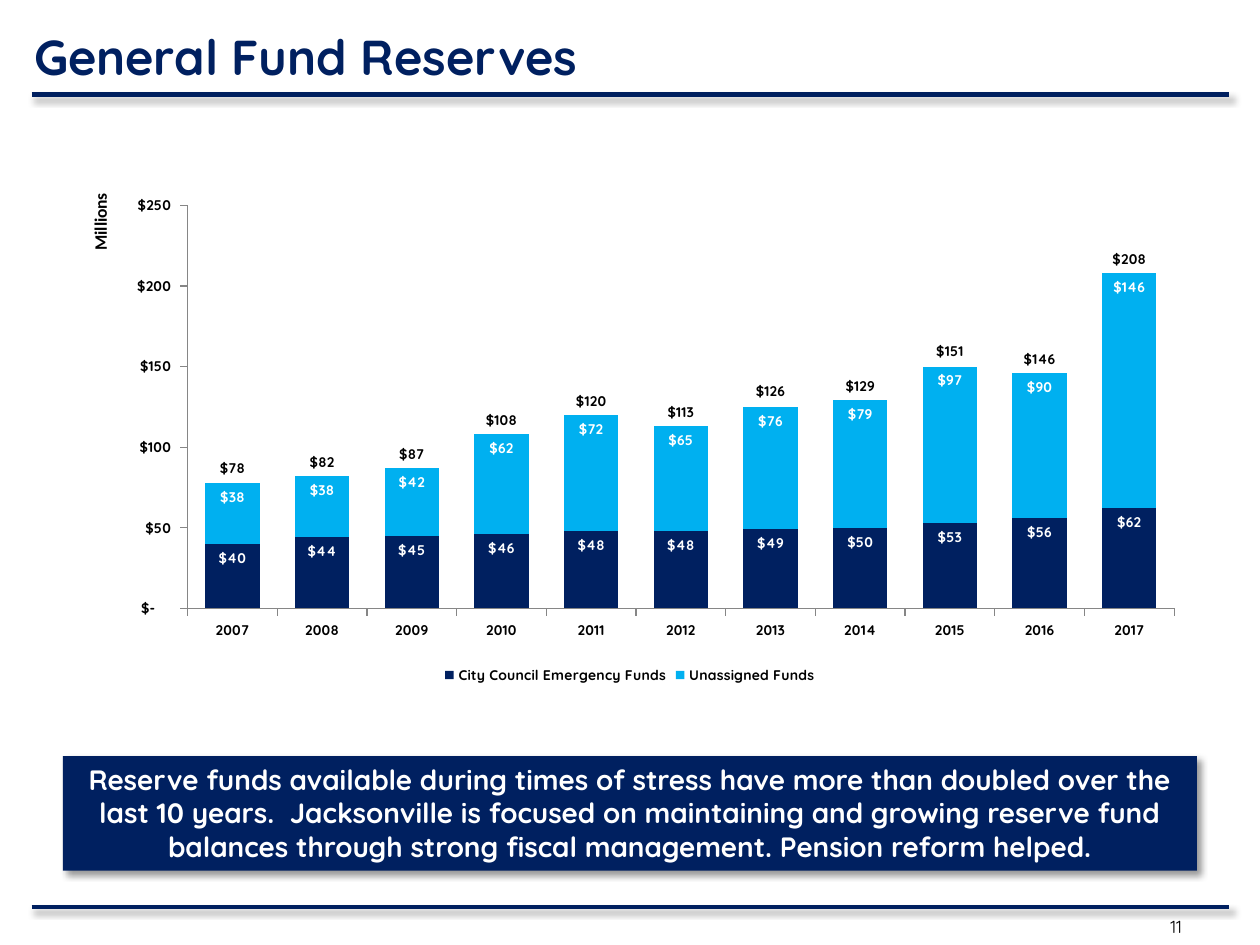
from dataclasses import dataclass

import lxml.etree
import pptx
import pptx.chart.data
import pptx.dml.color
import pptx.enum.chart
import pptx.enum.shapes
import pptx.enum.text
import pptx.oxml
import pptx.oxml.ns
import pptx.util

Inches = pptx.util.Inches
Pt = pptx.util.Pt
qn = pptx.oxml.ns.qn

COLORS = {
    "navy": "002060",
    "sky": "00B0F0",
    "white": "FFFFFF",
    "black": "000000",
    "axis": "868686",
}
DOLLARS = r'_("$"* #,##0_);_("$"* \(#,##0\);_("$"* "-"??_);_(@_)'
CHART_TEXT = {"size": Pt(8), "bold": True, "name": "Quicksand"}
LABEL_POSITION = pptx.enum.chart.XL_LABEL_POSITION
YEARS = [str(year) for year in range(2007, 2018)]


@dataclass
class FundSeries:
    name: str
    values: list[int]
    label_color: str
    label_position: LABEL_POSITION
    fill: str | None = None


@dataclass
class TextBlock:
    text: str
    font: dict
    color: str
    align: pptx.enum.text.PP_ALIGN
    frame: dict


FUNDS = [
    FundSeries("City Council Emergency Funds", [40, 44, 45, 46, 48, 48, 49, 50, 53, 56, 62],
               "white", LABEL_POSITION.INSIDE_END, "navy"),
    FundSeries("Unassigned Funds", [38, 38, 42, 62, 72, 65, 76, 79, 97, 90, 146],
               "white", LABEL_POSITION.INSIDE_END, "sky"),
    FundSeries("Series 3", [78, 82, 87, 108, 120, 113, 126, 129, 151, 146, 208],
               "black", LABEL_POSITION.ABOVE),
]


def rgb(name: str) -> pptx.dml.color.RGBColor:
    return pptx.dml.color.RGBColor.from_string(COLORS[name])


def set_format(target, values: dict) -> None:
    for attribute, value in values.items():
        setattr(target, attribute, value)


def style_font(font, values: dict, color: str) -> None:
    set_format(font, values)
    font.color.rgb = rgb(color)


def add_shadow(shape) -> None:
    """Add a soft shadow falling down and right; fill and line must be set already."""
    shape._element.spPr.append(pptx.oxml.parse_xml(
        f'<a:effectLst {pptx.oxml.ns.nsdecls("a")}>'
        f'<a:outerShdw blurRad="{Pt(4)}" dist="{Pt(3)}" dir="2700000" algn="tl" rotWithShape="0">'
        f'<a:srgbClr val="{COLORS["black"]}"><a:alpha val="40000"/></a:srgbClr>'
        '</a:outerShdw></a:effectLst>'))


def add_rule(slide, top: float) -> None:
    rule = slide.shapes.add_connector(
        pptx.enum.shapes.MSO_CONNECTOR.STRAIGHT,
        Inches(0.25), Inches(top), Inches(9.75), Inches(top))
    rule.line.color.rgb = rgb("navy")
    rule.line.width = Pt(2.5)
    add_shadow(rule)


def write_text(shape, block: TextBlock) -> None:
    set_format(shape.text_frame, block.frame)
    para = shape.text_frame.paragraphs[0]
    para.alignment = block.align
    span = para.add_run()
    span.text = block.text
    style_font(span.font, block.font, block.color)


def add_child(parent, tag: str, value=None):
    child = lxml.etree.SubElement(parent, qn(tag))
    if value is not None:
        child.set("val", str(value))
    return child


def manual_layout(places: dict, inner: bool = False):
    """Return a c:layout whose places are fractions of the chart."""
    layout = lxml.etree.Element(qn("c:layout"))
    manual = add_child(layout, "c:manualLayout")
    if inner:
        add_child(manual, "c:layoutTarget", "inner")
    for mode in ("c:xMode", "c:yMode"):
        add_child(manual, mode, "edge")
    for key, value in places.items():
        add_child(manual, f"c:{key}", value)
    return layout


def replace_layout(parent, layout, index: int) -> None:
    for old in parent.findall(qn("c:layout")):
        parent.remove(old)
    parent.insert(index, layout)


def move_totals_to_line(chart) -> None:
    """Turn the last stacked series into a line plot on the same axes."""
    bars = chart.plots[0]._element
    totals = bars.findall(qn("c:ser"))[-1]
    for invert in totals.findall(qn("c:invertIfNegative")):
        totals.remove(invert)
    line_plot = lxml.etree.Element(qn("c:lineChart"))
    add_child(line_plot, "c:grouping", "standard")
    add_child(line_plot, "c:varyColors", 0)
    line_plot.append(totals)
    add_child(line_plot, "c:marker", 1)
    for axis in bars.findall(qn("c:axId")):
        add_child(line_plot, "c:axId", axis.get("val"))
    bars.addnext(line_plot)


def style_series(series, fund: FundSeries) -> None:
    if fund.fill:
        series.format.fill.solid()
        series.format.fill.fore_color.rgb = rgb(fund.fill)
    else:
        series.format.line.fill.background()
        series.marker.style = pptx.enum.chart.XL_MARKER_STYLE.NONE
        series.smooth = False
    labels = series.data_labels
    set_format(labels, {"show_value": True, "number_format": DOLLARS,
                        "number_format_is_linked": False, "position": fund.label_position})
    style_font(labels.font, CHART_TEXT, fund.label_color)


def style_axes(chart) -> None:
    for axis in (chart.category_axis, chart.value_axis):
        set_format(axis, {"has_major_gridlines": False,
                          "major_tick_mark": pptx.enum.chart.XL_TICK_MARK.OUTSIDE})
        axis.format.line.color.rgb = rgb("axis")
        style_font(axis.tick_labels.font, CHART_TEXT, "black")
    values = chart.value_axis
    set_format(values, {"minimum_scale": 0, "maximum_scale": 250, "major_unit": 50})
    set_format(values.tick_labels, {"number_format": DOLLARS, "number_format_is_linked": False})
    title = values.axis_title
    title.text_frame.text = "Millions"
    style_font(title.text_frame.paragraphs[0].runs[0].font,
               {"size": Pt(10), "bold": True, "name": "Calibri"}, "black")
    replace_layout(title._element, manual_layout({"x": 0.02, "y": 0.01}), 1)


def style_legend(chart) -> None:
    chart.has_legend = True
    legend = chart.legend
    set_format(legend, {"position": pptx.enum.chart.XL_LEGEND_POSITION.BOTTOM,
                        "include_in_layout": False})
    style_font(legend.font, CHART_TEXT, "black")
    entry = lxml.etree.Element(qn("c:legendEntry"))
    add_child(entry, "c:idx", len(FUNDS) - 1)
    add_child(entry, "c:delete", 1)
    legend._element.find(qn("c:legendPos")).addnext(entry)


def add_reserve_chart(slide) -> None:
    data = pptx.chart.data.CategoryChartData()
    data.categories = YEARS
    for fund in FUNDS:
        data.add_series(fund.name, fund.values)
    chart = slide.shapes.add_chart(
        pptx.enum.chart.XL_CHART_TYPE.COLUMN_STACKED,
        Inches(0.5), Inches(1.47), Inches(9), Inches(4), data).chart
    chart.has_title = False
    style_font(chart.font, {"size": Pt(10), "name": "Calibri"}, "black")
    set_format(chart.plots[0], {"gap_width": 65, "overlap": 100, "vary_by_categories": False})
    move_totals_to_line(chart)
    all_series = [series for plot in chart.plots for series in plot.series]
    for series, fund in zip(all_series, FUNDS):
        style_series(series, fund)
    style_axes(chart)
    style_legend(chart)
    plot_area = chart.plots[0]._element.getparent()
    replace_layout(plot_area, manual_layout(
        {"x": 0.11, "y": 0.04, "w": 0.87, "h": 0.8}, inner=True), 0)


def main() -> None:
    deck = pptx.Presentation()
    deck.slide_width, deck.slide_height = Inches(10), Inches(7.5)
    slide = deck.slides.add_slide(deck.slide_layouts[6])
    align, anchor = pptx.enum.text.PP_ALIGN, pptx.enum.text.MSO_ANCHOR
    grow = pptx.enum.text.MSO_AUTO_SIZE.SHAPE_TO_FIT_TEXT
    margins = {"margin_left": Inches(0.12), "margin_right": Inches(0.12),
               "margin_top": Inches(0.06), "margin_bottom": Inches(0.06)}

    for top in (0.75, 7.2):
        add_rule(slide, top)

    number_box = slide.shapes.add_textbox(Inches(7.17), Inches(7.15), Inches(2.33), Inches(0.4))
    write_text(number_box, TextBlock(
        "11", {"size": Pt(10), "name": "Quicksand"}, "black", align.RIGHT,
        margins | {"word_wrap": True, "vertical_anchor": anchor.MIDDLE}))

    title_box = slide.shapes.add_textbox(Inches(0.15), Inches(0.15), Inches(4.59), Inches(0.59))
    write_text(title_box, TextBlock(
        "General Fund Reserves", {"size": Pt(28), "bold": True, "name": "Quicksand"}, "navy",
        align.LEFT, margins | {"word_wrap": False, "auto_size": grow}))

    message_box = slide.shapes.add_shape(
        pptx.enum.shapes.MSO_SHAPE.RECTANGLE, Inches(0.5), Inches(6), Inches(9), Inches(0.91))
    message_box.fill.solid()
    message_box.fill.fore_color.rgb = rgb("navy")
    message_box.line.fill.background()
    add_shadow(message_box)
    write_text(message_box, TextBlock(
        "Reserve funds available during times of stress have more than doubled over the last "
        "10 years.  Jacksonville is focused on maintaining and growing reserve fund balances "
        "through strong fiscal management. Pension reform helped.",
        {"size": Pt(16), "bold": True, "name": "Quicksand"}, "white", align.CENTER,
        {"word_wrap": True, "auto_size": grow, "vertical_anchor": anchor.TOP}))

    add_reserve_chart(slide)
    deck.save("out.pptx")


if __name__ == "__main__":
    main()
